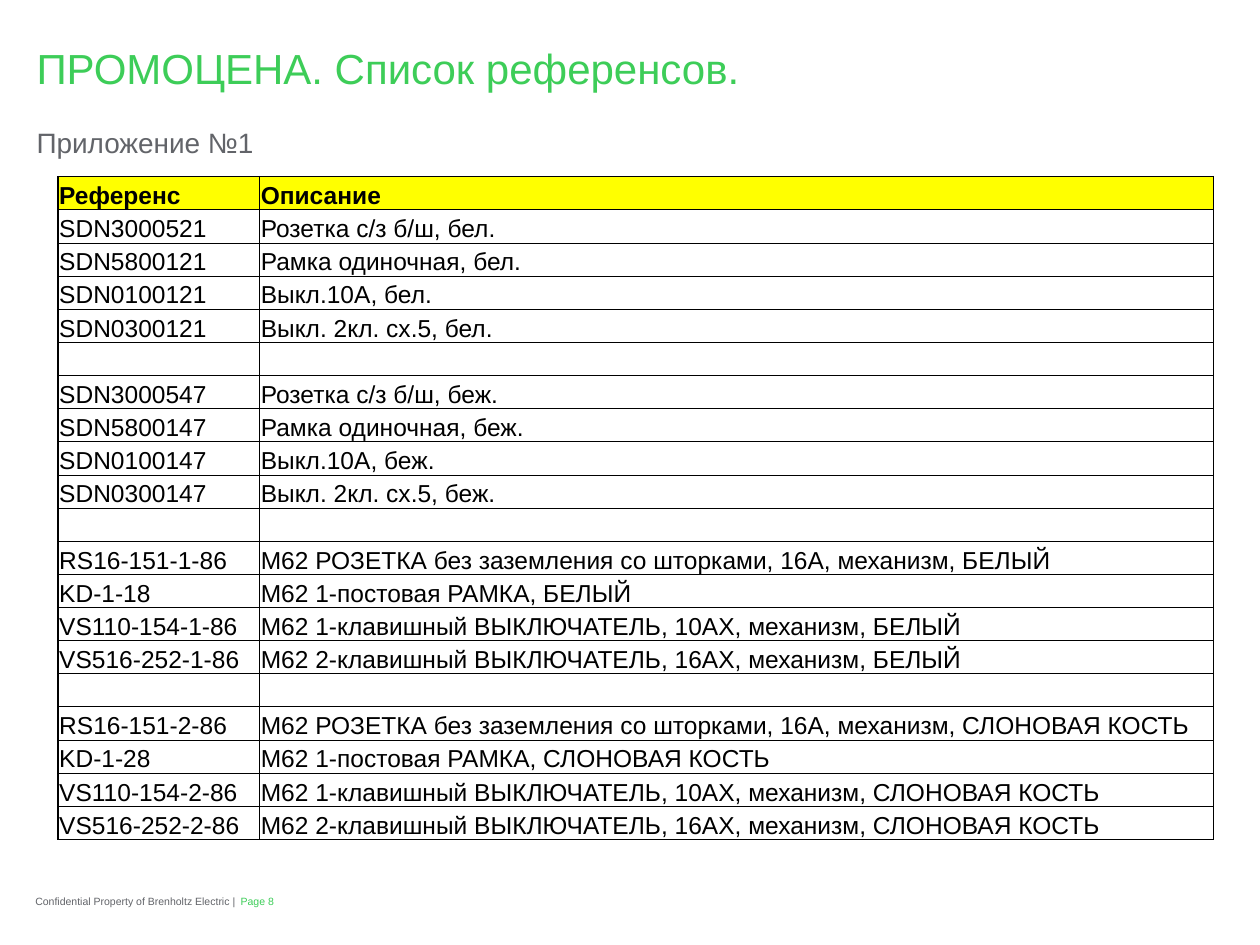
from lxml.etree import SubElement
from pptx import Presentation
from pptx.dml.color import RGBColor
from pptx.enum.text import MSO_ANCHOR as Anchor, MSO_AUTO_SIZE as AutoSize, PP_ALIGN as Align
from pptx.oxml.ns import qn
from pptx.util import Inches, Pt

SLIDE_WIDTH, SLIDE_HEIGHT = Inches(10), Inches(7.5)
FONT = "Arial"
COLORS = {"green": "3DCD58", "gray": "626469", "black": "000000", "yellow": "FFFF00"}
THIN, THICK = Pt(0.5), Pt(1)
CELL_SIZE = 14

HEADER = ("Референс", "Описание")
SOCKET_FINISHES = (("21", "бел."), ("47", "беж."))
SOCKET_ITEMS = (
    ("SDN30005", "Розетка с/з б/ш"),
    ("SDN58001", "Рамка одиночная"),
    ("SDN01001", "Выкл.10А"),
    ("SDN03001", "Выкл. 2кл. cx.5"),
)
SERIES = "M62"
SERIES_FINISHES = (("1", "БЕЛЫЙ"), ("2", "СЛОНОВАЯ КОСТЬ"))
SERIES_ITEMS = (
    ("RS16-151-{}-86", "РОЗЕТКА без заземления со шторками, 16А, механизм"),
    ("KD-1-{}8", "1-постовая РАМКА"),
    ("VS110-154-{}-86", "1-клавишный ВЫКЛЮЧАТЕЛЬ, 10АХ, механизм"),
    ("VS516-252-{}-86", "2-клавишный ВЫКЛЮЧАТЕЛЬ, 16АХ, механизм"),
)


def frame(left, top, width, height):
    """Turn percentages of the slide into lengths."""
    return (int(SLIDE_WIDTH * left / 100), int(SLIDE_HEIGHT * top / 100),
            int(SLIDE_WIDTH * width / 100), int(SLIDE_HEIGHT * height / 100))


def price_rows():
    """List the header and the four groups, parted by empty rows."""
    groups = [[(prefix + code, f"{name}, {finish}") for prefix, name in SOCKET_ITEMS]
              for code, finish in SOCKET_FINISHES]
    groups += [[(pattern.format(code), f"{SERIES} {name}, {finish}")
                for pattern, name in SERIES_ITEMS]
               for code, finish in SERIES_FINISHES]
    rows = [HEADER]
    for number, group in enumerate(groups):
        if number:
            rows.append(("", ""))
        rows += group
    return rows


def style_paragraph(paragraph, size, color, bold=False):
    paragraph.alignment = Align.LEFT
    font = paragraph.font
    font.name, font.size, font.bold = FONT, Pt(size), bold
    font.color.rgb = RGBColor.from_string(COLORS[color])


def set_margins(target, left, top, right, bottom):
    target.margin_left, target.margin_top = Inches(left), Inches(top)
    target.margin_right, target.margin_bottom = Inches(right), Inches(bottom)


def fill_placeholder(shape, place, text, size, color):
    shape.left, shape.top, shape.width, shape.height = frame(*place)
    text_frame = shape.text_frame
    text_frame.text = text
    text_frame.auto_size = AutoSize.NONE
    text_frame.vertical_anchor = Anchor.TOP
    set_margins(text_frame, 0.01, 0, 0, 0)
    paragraph = text_frame.paragraphs[0]
    properties = paragraph._p.get_or_add_pPr()
    properties.set("marL", "0")
    properties.set("indent", "0")
    SubElement(properties, qn("a:buNone"))
    paragraph.space_before = Pt(0)
    style_paragraph(paragraph, size, color)


def add_footer(slide, place, text, color):
    text_frame = slide.shapes.add_textbox(*frame(*place)).text_frame
    text_frame.text = text
    text_frame.word_wrap = False
    text_frame.vertical_anchor = Anchor.MIDDLE
    set_margins(text_frame, 0, 0, 0, 0)
    style_paragraph(text_frame.paragraphs[0], 6, color)


def add_border(cell, side, width):
    line = SubElement(cell._tc.get_or_add_tcPr(), qn(f"a:ln{side}"), w=str(width))
    fill = SubElement(line, qn("a:solidFill"))
    SubElement(fill, qn("a:srgbClr"), val=COLORS["black"])


def format_cell(cell, text, is_header, outer_edges):
    cell.text = text
    cell.vertical_anchor = Anchor.BOTTOM
    set_margins(cell, 0.01, 0.01, 0.01, 0)
    for side, is_outer in outer_edges.items():
        add_border(cell, side, THICK if is_outer else THIN)
    if is_header:
        cell.fill.solid()
        cell.fill.fore_color.rgb = RGBColor.from_string(COLORS["yellow"])
    else:
        cell.fill.background()
    paragraph = cell.text_frame.paragraphs[0]
    style_paragraph(paragraph, CELL_SIZE, "black", is_header)
    if not text:
        SubElement(paragraph._p, qn("a:endParaRPr"), sz=str(CELL_SIZE * 100))


def add_price_table(slide, place, column_percents):
    rows = price_rows()
    left, top, width, height = frame(*place)
    table = slide.shapes.add_table(len(rows), len(HEADER), left, top, width, height).table
    table.first_row = table.horz_banding = False
    for column, percent in zip(table.columns, column_percents):
        column.width = int(SLIDE_WIDTH * percent / 100)
    for row_index, values in enumerate(rows):
        table.rows[row_index].height = height // len(rows)
        for column_index, text in enumerate(values):
            outer_edges = {
                "L": column_index == 0,
                "R": column_index == len(HEADER) - 1,
                "T": row_index == 0,
                "B": row_index == len(rows) - 1,
            }
            format_cell(table.cell(row_index, column_index), text, row_index == 0, outer_edges)


def main():
    presentation = Presentation()
    presentation.slide_width, presentation.slide_height = SLIDE_WIDTH, SLIDE_HEIGHT
    slide = presentation.slides.add_slide(presentation.slide_layouts[1])
    title, subtitle = slide.placeholders
    fill_placeholder(title, (2.8, 4.53, 94.6, 7.2), "ПРОМОЦЕНА. Список референсов.", 24, "green")
    fill_placeholder(subtitle, (2.8, 13.3, 94.6, 4.93), "Приложение №1", 16, "gray")
    add_price_table(slide, (4.6, 18.7, 91.7, 70.2), (16, 75.7))
    add_footer(slide, (2.8, 94.7, 16.5, 1.3),
               "Confidential Property of Brenholtz Electric |", "gray")
    add_footer(slide, (19.1, 94.7, 5.7, 1.3), "Page 8", "green")
    presentation.save("out.pptx")


if __name__ == "__main__":
    main()
